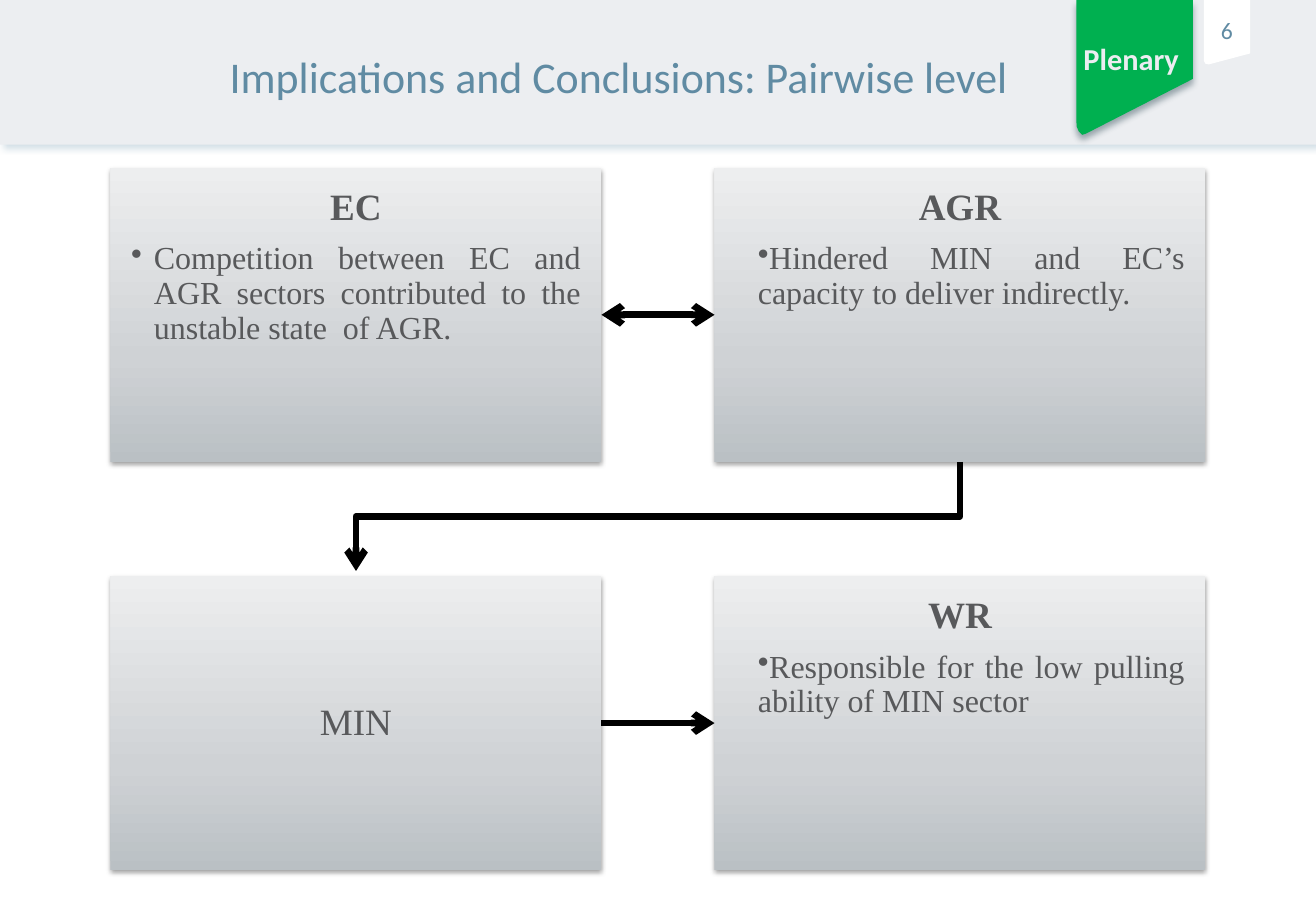
from copy import deepcopy
from lxml.etree import SubElement
from pptx import Presentation
from pptx.dml.color import RGBColor as RGB
from pptx.enum.shapes import MSO_CONNECTOR as LINK, MSO_SHAPE as SHAPE
from pptx.enum.text import MSO_ANCHOR as ANCHOR, PP_ALIGN as ALIGN
from pptx.oxml.ns import qn
from pptx.util import Pt

TITLE = "Implications and Conclusions: Pairwise level"
BADGE = "Plenary"
NUMBER = "6"

# name: (column, row, finding, hanging bullet)
CARDS = {
    "EC": (0, 0, "Competition between EC and AGR sectors contributed to the "
                 "unstable state\u00a0 of AGR.", True),
    "AGR": (1, 0, "Hindered MIN and EC’s capacity to deliver indirectly.", False),
    "MIN": (0, 1, "", False),
    "WR": (1, 1, "Responsible for the low pulling ability of MIN sector", False),
}
# from, to, arrow at both ends
LINKS = [("EC", "AGR", True), ("MIN", "WR", False)]
ELBOW = ("AGR", "MIN")

TAB = [(713.5, 0), (741, 0), (741, 31.7), (716.5, 38.2), (714.5, 37.8), (713.5, 36)]
RIBBON = [(638, 0), (707, 0), (707, 46.8), (643.7, 79.2), (641.5, 79.9),
          (639.4, 77.8), (638.2, 75), (638, 71.3)]

THEME = {
    "sans": "Calibri", "serif": "Times New Roman",
    "band": "ECEEF1", "tab": "FFFFFF", "green": "00B050",
    "title": "608BA3", "badge": "ECEDF1", "body": "58595B", "line": "000000",
    "card": [(0, "BAC0C4"), (0.35, "CFD2D5"), (1, "EDEEEF")],
    "title_pt": 26, "num_pt": 14, "badge_pt": 18, "head_pt": 22, "body_pt": 19,
    "line_pt": 4,
    # colour, opacity %, blur, distance, angle
    "band_shade": ("8FAEC1", 40, 4, 3, 45),
    "ribbon_shade": ("183642", 40, 4, 3, 90),
    "card_shade": ("000000", 38, 3.1, 1.6, 90),
}

WIDE, HIGH = 780, 540
LEFT, TOP = 65.5, 99.5
CARD_W, CARD_H = 291, 174.25
STEP_X, STEP_Y = 358, 242
PAD, INDENT = 12.25, 13.5


def color(key):
    return RGB.from_string(THEME[key])


def shade(shape, key):
    tone, alpha, blur, dist, angle = THEME[key]
    effects = shape.element.spPr.find(qn("a:effectLst"))
    outer = SubElement(effects, qn("a:outerShdw"), blurRad=str(Pt(blur)),
                       dist=str(Pt(dist)), dir=str(angle * 60000),
                       algn="ctr", rotWithShape="0")
    rgb = SubElement(outer, qn("a:srgbClr"), val=tone)
    SubElement(rgb, qn("a:alpha"), val=str(alpha * 1000))


def paint(shape, key):
    """Give a flat fill, no outline and no inherited shadow."""
    shape.shadow.inherit = False
    shape.fill.solid()
    shape.fill.fore_color.rgb = color(key)
    shape.line.fill.background()


def outline(shapes, points, key):
    first, *rest = [(Pt(x), Pt(y)) for x, y in points]
    pen = shapes.build_freeform(*first)
    pen.add_line_segments(rest, close=True)
    shape = pen.convert_to_shape()
    paint(shape, key)
    return shape


def inset(frame, left, top, right, bottom):
    frame.margin_left, frame.margin_top = Pt(left), Pt(top)
    frame.margin_right, frame.margin_bottom = Pt(right), Pt(bottom)


def style(para, face, size, tone, bold=False, align=ALIGN.CENTER):
    para.alignment = align
    for run in para.runs:
        font = run.font
        font.name, font.size, font.bold = THEME[face], Pt(THEME[size]), bold
        font.color.rgb = color(tone)


def label(shapes, box, text, *look):
    frame = shapes.add_textbox(*map(Pt, box)).text_frame
    frame.word_wrap = True
    frame.text = text
    style(frame.paragraphs[0], *look)
    return frame


def spot(name):
    col, row = CARDS[name][:2]
    return LEFT + col * STEP_X, TOP + row * STEP_Y


def grade(shape):
    """Fill with the card gradient, dark at the bottom."""
    fill = shape.fill
    fill.gradient()
    fill.gradient_angle = 90
    stops = shape.element.spPr.find(".//" + qn("a:gsLst"))
    stops.append(deepcopy(stops[0]))
    for stop, (place, tone) in zip(fill.gradient_stops, THEME["card"]):
        stop.position = place
        stop.color.rgb = RGB.from_string(tone)


def bullet(para, hang):
    props = para._p.get_or_add_pPr()
    props.set("marL", str(Pt(INDENT)))
    props.set("indent", str(-Pt(INDENT) if hang else 0))
    SubElement(props, qn("a:buChar"), char="•")


def card(shapes, name):
    _, _, note, hang = CARDS[name]
    box = shapes.add_shape(SHAPE.RECTANGLE, *map(Pt, (*spot(name), CARD_W, CARD_H)))
    paint(box, "tab")
    grade(box)
    shade(box, "card_shade")
    frame = box.text_frame
    frame.word_wrap = True
    frame.vertical_anchor = ANCHOR.TOP if note else ANCHOR.MIDDLE
    inset(frame, PAD, PAD, PAD, PAD)
    frame.text = f"{name}\n{note}" if note else name
    head, *rest = frame.paragraphs
    style(head, "serif", "head_pt", "body", bool(note))
    head.line_spacing, head.space_after = 0.9, Pt(8)
    for para in rest:
        style(para, "serif", "body_pt", "body", align=ALIGN.JUSTIFY)
        para.line_spacing, para.space_after = 0.9, Pt(3)
        bullet(para, hang)
    return box


def arrow(shapes, kind, ends, both=False):
    link = shapes.add_connector(kind, *map(Pt, ends))
    link.line.color.rgb = color("line")
    link.line.width = Pt(THEME["line_pt"])
    props = link.element.spPr
    for tip in ("a:headEnd", "a:tailEnd")[0 if both else 1:]:
        SubElement(props.find(qn("a:ln")), qn(tip), type="arrow")
    SubElement(props, qn("a:effectLst"))
    return link


def elbow(shapes, start, end):
    """Run down, across and down: a bent connector turned a quarter."""
    (x1, y1), (x2, y2) = spot(start), spot(end)
    drop, span = y2 - 3 - y1 - CARD_H, x1 - x2
    mid_x, mid_y = (x1 + x2 + CARD_W) / 2, y1 + CARD_H + drop / 2
    link = arrow(shapes, LINK.ELBOW, (mid_x - drop / 2, mid_y - span / 2,
                                      mid_x + drop / 2, mid_y + span / 2))
    link.element.spPr.find(qn("a:xfrm")).set("rot", str(90 * 60000))


def main():
    deck = Presentation()
    deck.slide_width, deck.slide_height = Pt(WIDE), Pt(HIGH)
    shapes = deck.slides.add_slide(deck.slide_layouts[6]).shapes

    band = shapes.add_shape(SHAPE.RECTANGLE, 0, 0, Pt(WIDE), Pt(85.7))
    paint(band, "band")
    shade(band, "band_shade")

    tab = outline(shapes, TAB, "tab").text_frame
    tab.word_wrap = False
    tab.vertical_anchor = ANCHOR.MIDDLE
    inset(tab, 0, 0, 0, 3)
    tab.text = NUMBER
    style(tab.paragraphs[0], "sans", "num_pt", "title")

    shade(outline(shapes, RIBBON, "green"), "ribbon_shade")
    badge = label(shapes, (639.5, 24, 62, 21.5), BADGE,
                  "sans", "badge_pt", "badge", True)
    inset(badge, 0, 0, 0, 0)
    label(shapes, (43, 26, 648, 29.5), TITLE, "sans", "title_pt", "title")

    boxes = {name: card(shapes, name) for name in CARDS}
    for start, end, both in LINKS:
        link = arrow(shapes, LINK.STRAIGHT, (0, 0, 0, 0), both)
        link.begin_connect(boxes[start], 3)
        link.end_connect(boxes[end], 1)
    elbow(shapes, *ELBOW)
    deck.save("out.pptx")


if __name__ == "__main__":
    main()
